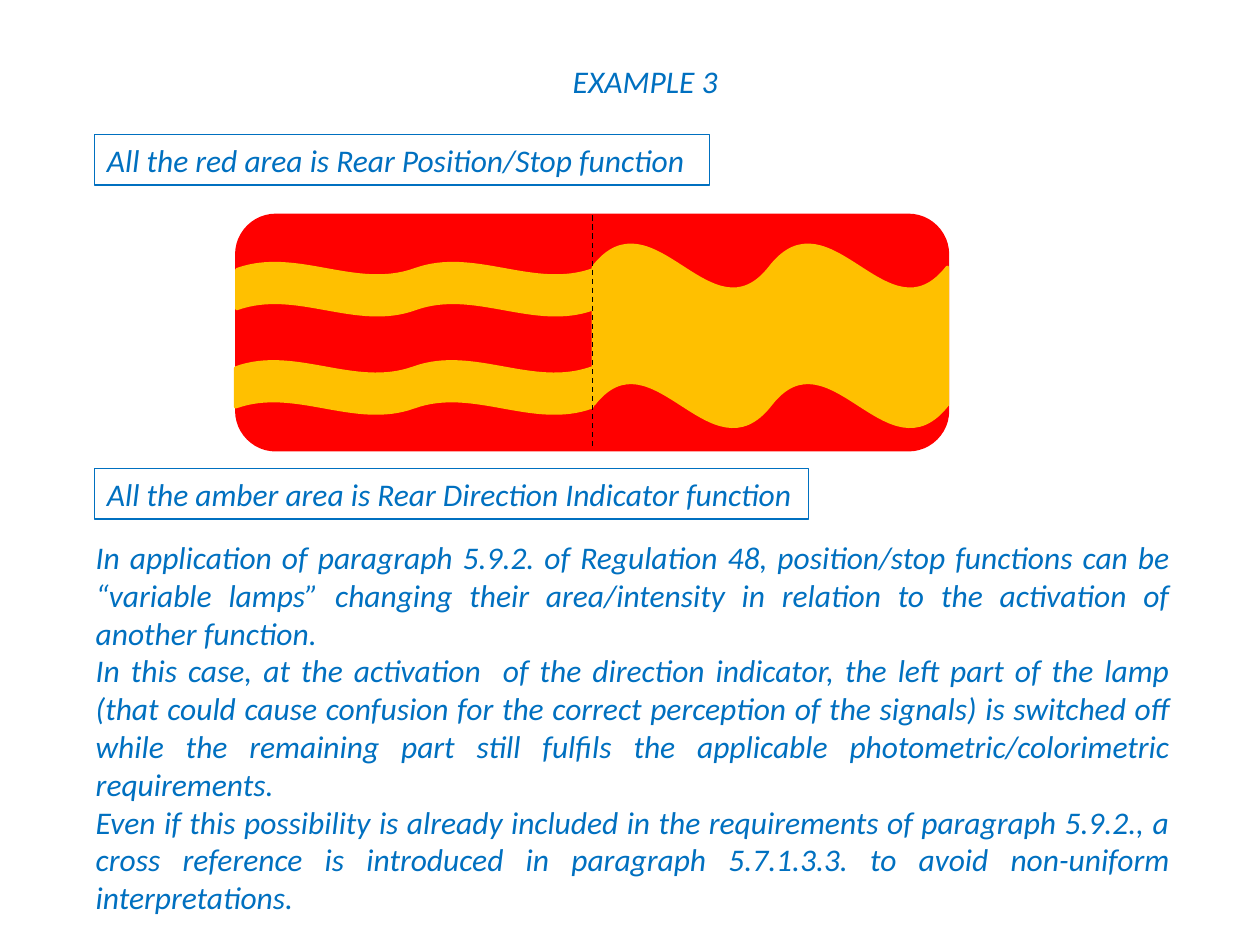
from dataclasses import dataclass

from lxml.etree import SubElement
from pptx import Presentation
from pptx.dml.color import RGBColor
from pptx.enum.dml import MSO_LINE
from pptx.enum.shapes import MSO_CONNECTOR, MSO_SHAPE
from pptx.enum.text import MSO_ANCHOR, PP_ALIGN
from pptx.oxml.ns import qn
from pptx.util import Inches, Pt

COLORS = {"blue": "0070C0", "red": "FF0000", "amber": "FFC000", "black": "000000"}

BODY = (
    "In application of paragraph 5.9.2. of Regulation 48, position/stop functions "
    "can be “variable lamps” changing their area/intensity in relation to the "
    "activation of another function.",
    "In this case, at the activation  of the direction indicator, the left part of "
    "the lamp (that could cause confusion for the correct perception of the signals) "
    "is switched off while the remaining part still fulfils the applicable "
    "photometric/colorimetric requirements.",
    "Even if this possibility is already included in the requirements of paragraph "
    "5.9.2., a cross reference is introduced in paragraph 5.7.1.3.3. to avoid "
    "non-uniform interpretations.",
)


@dataclass
class Box:
    left: float
    top: float
    width: float
    height: float

    def place(self) -> tuple:
        return tuple(Inches(v) for v in (self.left, self.top, self.width, self.height))


@dataclass
class Label:
    text: str
    box: Box


LAMP = Box(1.88, 1.71, 5.64, 1.86)
MID = LAMP.left + LAMP.width / 2
WAVES = (
    Box(1.87, 2.87, 2.83, 0.41),
    Box(1.88, 2.09, 2.83, 0.41),
    Box(4.71, 1.94, 2.81, 1.45),
)
LABELS = (
    Label("All the red area is Rear Position/Stop function", Box(0.75, 1.07, 4.88, 0.4)),
    Label("All the amber area is Rear Direction Indicator function",
          Box(0.75, 3.72, 5.67, 0.4)),
)


def color(name: str) -> RGBColor:
    return RGBColor.from_string(COLORS[name])


def write(shape, *texts: str, align=PP_ALIGN.LEFT, size=18, tint="blue",
          anchor=MSO_ANCHOR.TOP, wrap=True) -> None:
    frame = shape.text_frame
    frame.word_wrap = wrap
    frame.vertical_anchor = anchor
    for i, text in enumerate(texts):
        para = frame.add_paragraph() if i else frame.paragraphs[0]
        para.alignment = align
        para.space_before = para.space_after = Pt(0)
        run = para.add_run()
        run.text = text
        font = run.font
        font.name, font.size, font.italic = "Calibri", Pt(size), True
        font.color.rgb = color(tint)


def draw(slide, kind: MSO_SHAPE, box: Box, fill: str = "", line: str = "",
         weight: float = 2):
    shape = slide.shapes.add_shape(kind, *box.place())
    shape.shadow.inherit = False
    if fill:
        shape.fill.solid()
        shape.fill.fore_color.rgb = color(fill)
    else:
        shape.fill.background()
    shape.line.color.rgb = color(line or fill)
    shape.line.width = Pt(weight)
    return shape


def move(shape, box: Box) -> None:
    shape.left, shape.top, shape.width, shape.height = box.place()


def main() -> None:
    deck = Presentation()
    deck.slide_width, deck.slide_height = Inches(10), Inches(7.5)
    slide = deck.slides.add_slide(deck.slide_layouts[1])

    # Title
    title = slide.shapes.title
    move(title, Box(4.29, 0.44, 1.66, 0.4))
    write(title, "EXAMPLE 3", align=PP_ALIGN.CENTER, wrap=False)

    # Lamp with amber waves
    draw(slide, MSO_SHAPE.ROUNDED_RECTANGLE, LAMP, fill="red")
    for box in WAVES:
        wave = draw(slide, MSO_SHAPE.DOUBLE_WAVE, box, fill="amber")
        wave.adjustments[0] = 0.125
        wave.adjustments[1] = 0

    # Dashed line between the two halves
    split = slide.shapes.add_connector(
        MSO_CONNECTOR.STRAIGHT, Inches(MID), Inches(LAMP.top),
        Inches(MID), Inches(LAMP.top + LAMP.height))
    split.line.color.rgb = color("black")
    split.line.width = Pt(0.75)
    split.line.dash_style = MSO_LINE.DASH
    SubElement(split.element.spPr, qn("a:effectLst"))

    # Framed labels
    for label in LABELS:
        frame = draw(slide, MSO_SHAPE.RECTANGLE, label.box, line="blue", weight=0.75)
        write(frame, label.text, wrap=False)

    # Explanation, without bullets
    body = slide.placeholders[1]
    move(body, Box(0.66, 4.22, 8.73, 3.13))
    write(body, *BODY, align=PP_ALIGN.JUSTIFY)
    for para in body.text_frame.paragraphs:
        props = para._p.get_or_add_pPr()
        props.set("marL", "0")
        props.set("indent", "0")
        SubElement(props, qn("a:buNone"))

    deck.save("out.pptx")


if __name__ == "__main__":
    main()
